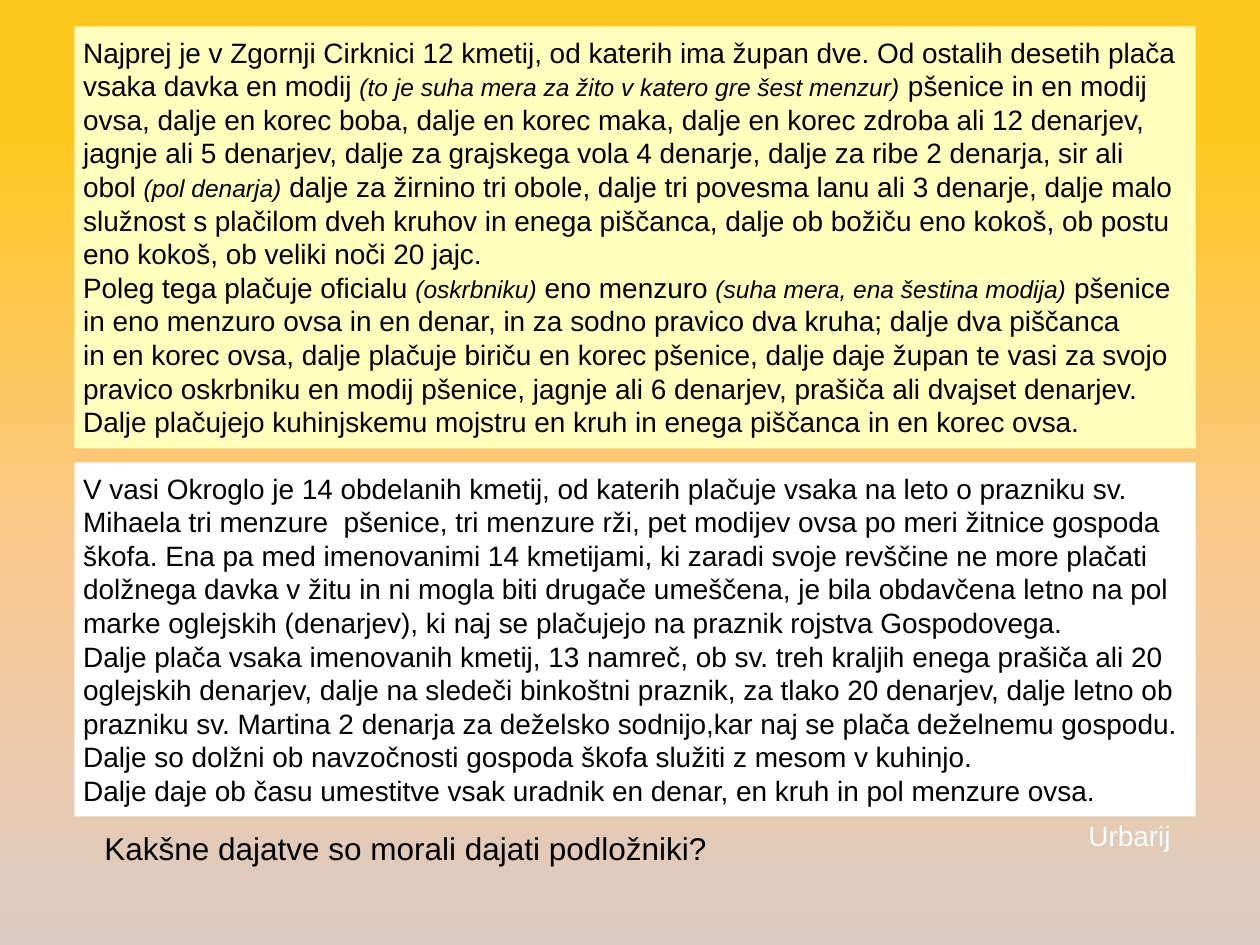
from lxml import etree
from pptx import Presentation
from pptx.dml.color import RGBColor
from pptx.enum.shapes import MSO_SHAPE
from pptx.enum.text import MSO_ANCHOR, MSO_AUTO_SIZE, PP_ALIGN
from pptx.oxml.ns import qn
from pptx.util import Inches, Pt

RECT = MSO_SHAPE.RECTANGLE
TOP = MSO_ANCHOR.TOP
GROW = MSO_AUTO_SIZE.SHAPE_TO_FIT_TEXT
LEFT = PP_ALIGN.LEFT

# Text between asterisks is an explanatory note, set smaller and in italics.
CIRKNICA = [
    "Najprej je v Zgornji Cirknici 12 kmetij, od katerih ima župan dve. "
    "Od ostalih desetih plača vsaka davka en modij "
    "*(to je suha mera za žito v katero gre šest menzur)* pšenice in en modij ovsa, "
    "dalje en korec boba, dalje en korec maka, dalje en korec zdroba ali 12 denarjev, "
    "jagnje ali 5 denarjev, dalje za grajskega vola 4 denarje, dalje za ribe 2 denarja, sir ali",
    "obol *(pol denarja)* dalje za žirnino tri obole, dalje tri povesma lanu ali 3 denarje, "
    "dalje malo služnost s plačilom dveh kruhov in enega piščanca, dalje ob božiču eno kokoš, "
    "ob postu eno kokoš, ob veliki noči 20 jajc.",
    "Poleg tega plačuje oficialu *(oskrbniku)* eno menzuro "
    "*(suha mera, ena šestina modija)* pšenice",
    "in eno menzuro ovsa in en denar, in za sodno pravico dva kruha; dalje dva piščanca",
    "in en korec ovsa, dalje plačuje biriču en korec pšenice, dalje daje župan te vasi za svojo "
    "pravico oskrbniku en modij pšenice, jagnje ali 6 denarjev, prašiča ali dvajset denarjev.",
    "Dalje plačujejo kuhinjskemu mojstru en kruh in enega piščanca in en korec ovsa.",
]
OKROGLO = [
    "V vasi Okroglo je 14 obdelanih kmetij, od katerih plačuje vsaka na leto o prazniku sv. "
    "Mihaela tri menzure  pšenice, tri menzure rži, pet modijev ovsa po meri žitnice gospoda "
    "škofa. Ena pa med imenovanimi 14 kmetijami, ki zaradi svoje revščine ne more plačati "
    "dolžnega davka v žitu in ni mogla biti drugače umeščena, je bila obdavčena letno na pol "
    "marke oglejskih (denarjev), ki naj se plačujejo na praznik rojstva Gospodovega.",
    "Dalje plača vsaka imenovanih kmetij, 13 namreč, ob sv. treh kraljih enega prašiča ali 20 "
    "oglejskih denarjev, dalje na sledeči binkoštni praznik, za tlako 20 denarjev, dalje letno ob "
    "prazniku sv. Martina 2 denarja za deželsko sodnijo,kar naj se plača deželnemu gospodu.",
    "Dalje so dolžni ob navzočnosti gospoda škofa služiti z mesom v kuhinjo.",
    "Dalje daje ob času umestitve vsak uradnik en denar, en kruh in pol menzure ovsa.",
]


def rgb(hex_color):
    return RGBColor.from_string(hex_color)


def write(tf, paragraphs, size=16, note_size=14, color="000000", font="Arial"):
    for i, text in enumerate(paragraphs):
        p = tf.paragraphs[0] if i == 0 else tf.add_paragraph()
        p.alignment = LEFT
        for j, part in enumerate(text.split("*")):
            is_note = j % 2 == 1
            r = p.add_run()
            r.text = part
            r.font.name = font
            r.font.size = Pt(note_size if is_note else size)
            r.font.italic = is_note
            r.font.color.rgb = rgb(color)


class SlideBuilder:
    """Holds the slide; positions are given in inches on a 10 x 7.5 page."""

    margin = 0.59
    panel_width = 8.9
    inset = 0.07

    def __init__(self, prs):
        self.s = prs.slides.add_slide(prs.slide_layouts[6])

    def background(self, stops):
        """Vertical gradient from (percent, colour) stops."""
        fill = self.s.background.fill
        fill.gradient()
        fill.gradient_angle = 270
        gs_lst = fill.gradient_stops[0]._gs.getparent()
        for gs in list(gs_lst):
            gs_lst.remove(gs)
        for percent, color in stops:
            gs = etree.SubElement(gs_lst, qn("a:gs"), pos=str(percent * 1000))
            etree.SubElement(gs, qn("a:srgbClr"), val=color)

    def panel(self, top, height, paragraphs, fill):
        sp = self.s.shapes.add_shape(RECT, Inches(self.margin), Inches(top),
                                     Inches(self.panel_width), Inches(height))
        sp.shadow.inherit = False
        sp.fill.solid()
        sp.fill.fore_color.rgb = rgb(fill)
        sp.line.fill.background()
        tf = sp.text_frame
        tf.word_wrap = True
        tf.auto_size = GROW
        tf.vertical_anchor = TOP
        tf.margin_left = tf.margin_right = Inches(self.inset)
        tf.margin_top = tf.margin_bottom = Inches(self.inset)
        write(tf, paragraphs)

    def label(self, left, top, width, height, text, **style):
        sp = self.s.shapes.add_textbox(Inches(left), Inches(top), Inches(width), Inches(height))
        tf = sp.text_frame
        tf.word_wrap = False
        tf.auto_size = GROW
        write(tf, [text], **style)


def main():
    prs = Presentation()
    prs.slide_width, prs.slide_height = Inches(10), Inches(7.5)
    slide = SlideBuilder(prs)
    slide.background([(14, "FFC81F"), (61, "F9C995"), (100, "DBCAC3")])
    slide.panel(0.21, 3.35, CIRKNICA, fill="FFFFBD")
    slide.panel(3.67, 2.81, OKROGLO, fill="FFFFFF")
    slide.label(8.54, 6.45, 0.85, 0.37, "Urbarij", color="FFFFFF")
    slide.label(0.73, 6.53, 4.98, 0.4, "Kakšne dajatve so morali dajati podložniki?", size=18)
    prs.save("out.pptx")


if __name__ == "__main__":
    main()
